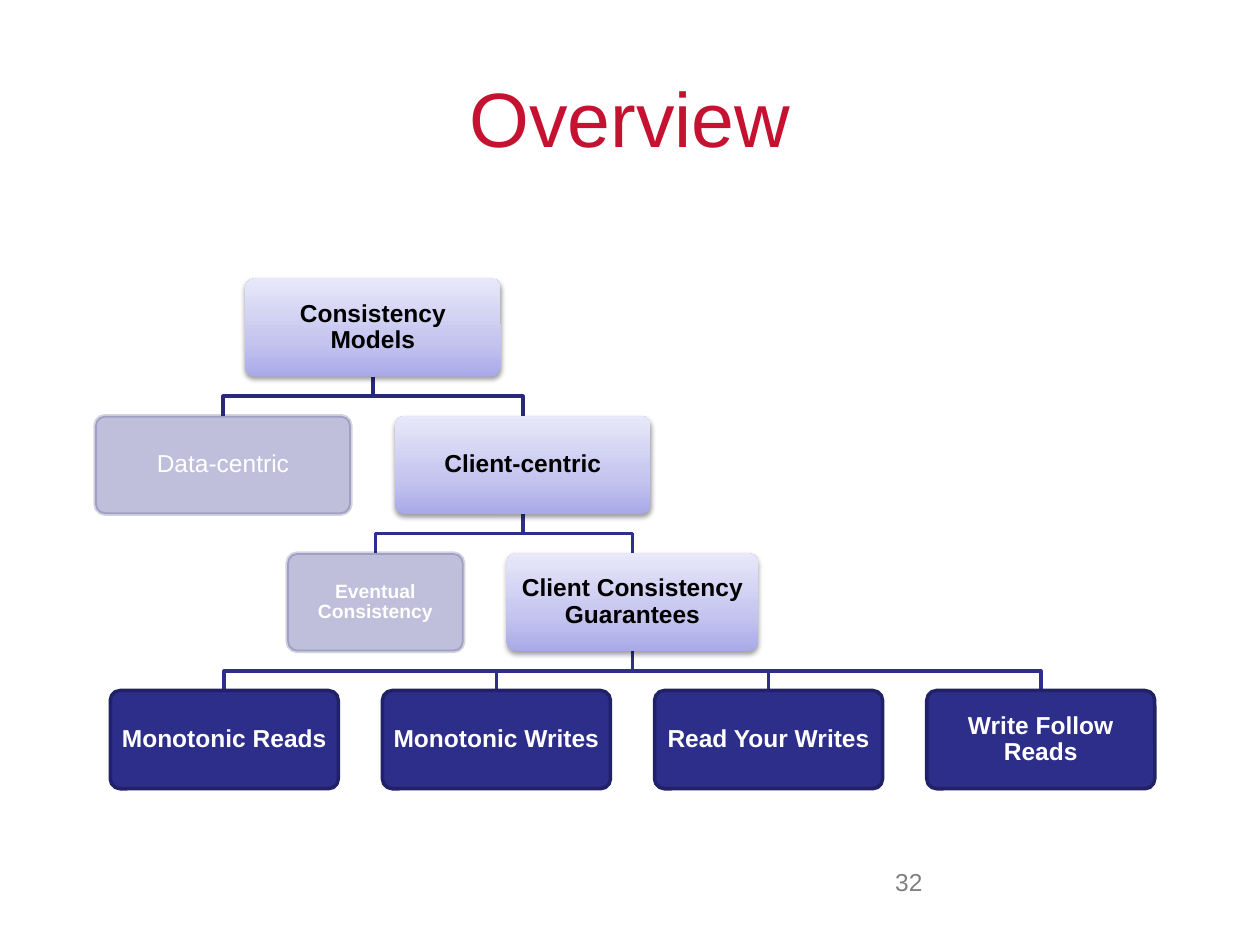
from dataclasses import dataclass, field

from lxml.etree import SubElement
from pptx import Presentation
from pptx.dml.color import RGBColor
from pptx.enum.shapes import MSO_SHAPE
from pptx.enum.text import MSO_ANCHOR, PP_ALIGN
from pptx.oxml import parse_xml
from pptx.oxml.ns import nsdecls, qn
from pptx.util import Inches, Pt

FONT = "Arial"
RED = RGBColor(0xC4, 0x12, 0x30)
GRAY = RGBColor(0x80, 0x80, 0x80)
BLACK = RGBColor(0, 0, 0)
WHITE = RGBColor(0xFF, 0xFF, 0xFF)
NAVY = RGBColor(0x2D, 0x2D, 0x8A)
NAVY_BORDER = RGBColor(0x21, 0x21, 0x66)
ROOT_LINK = RGBColor(0x29, 0x29, 0x7B)
LINK = RGBColor(0x2E, 0x2E, 0x8B)
GRADIENT_STOPS = (
    (0, RGBColor(0xA9, 0xA9, 0xE9)),
    (35, RGBColor(0xC4, 0xC4, 0xEF)),
    (100, RGBColor(0xE8, 0xE8, 0xFA)),
)
NODE_HEIGHT = 0.78
LEVEL_GAP = 0.31
LEAF_WIDTH = 1.81
LEAF_PITCH = 2.16


@dataclass
class Node:
    """One box of the tree, with its centre measured from the tree's left edge."""

    text: str
    center: float
    width: float
    style: str
    size: int = 14
    bold: bool = True
    link: RGBColor = LINK
    children: list = field(default_factory=list)


def consistency_tree():
    """Return the root of the consistency model tree."""
    names = ("Monotonic Reads", "Monotonic Writes", "Read Your Writes", "Write Follow Reads")
    leaves = [
        Node(name, 1.02 + index * LEAF_PITCH, LEAF_WIDTH, "solid")
        for index, name in enumerate(names)
    ]
    guarantees = Node("Client Consistency Guarantees", 4.26, 2, "active", children=leaves)
    eventual = Node("Eventual Consistency", 2.22, 1.4, "faded", size=11)
    client = Node("Client-centric", 3.39, 2.03, "active", children=[eventual, guarantees])
    data = Node("Data-centric", 1.01, 2.03, "faded", bold=False)
    return Node("Consistency Models", 2.2, 2.03, "active", link=ROOT_LINK, children=[data, client])


def format_text(paragraph, size, color, bold=False, align=PP_ALIGN.CENTER):
    """Format a paragraph and its runs."""
    paragraph.alignment = align
    for run in paragraph.runs:
        run.font.name = FONT
        run.font.size = Pt(size)
        run.font.bold = bold
        run.font.color.rgb = color


def set_alpha(fill_format, percent):
    """Give a solid fill or line the stated opacity."""
    color = fill_format.find(".//" + qn("a:srgbClr"))
    SubElement(color, qn("a:alpha"), val=str(percent * 1000))


def style_active(shape):
    """Give a box the upward gradient and the soft shadow."""
    stops = "".join(
        f'<a:gs pos="{position * 1000}"><a:srgbClr val="{color}"/></a:gs>'
        for position, color in GRADIENT_STOPS
    )
    gradient = parse_xml(
        f'<a:gradFill {nsdecls("a")} rotWithShape="1"><a:gsLst>{stops}</a:gsLst>'
        '<a:lin ang="16200000" scaled="0"/></a:gradFill>'
    )
    properties = shape._element.spPr
    properties.find(qn("a:prstGeom")).addnext(gradient)
    shape.line.fill.background()
    shadow = parse_xml(
        f'<a:outerShdw {nsdecls("a")} blurRad="{Pt(3.1)}" dist="{Pt(1.6)}" dir="5400000"'
        ' rotWithShape="0"><a:srgbClr val="000000"><a:alpha val="38000"/></a:srgbClr>'
        "</a:outerShdw>"
    )
    properties.find(qn("a:effectLst")).append(shadow)


def style_navy(shape, faded):
    """Give a box the navy fill and border, see-through when faded."""
    shape.fill.solid()
    shape.fill.fore_color.rgb = NAVY
    shape.line.color.rgb = NAVY_BORDER
    shape.line.width = Pt(2)
    if faded:
        properties = shape._element.spPr
        set_alpha(properties.find(qn("a:solidFill")), 30)
        set_alpha(properties.find(qn("a:ln")), 20)


def add_node(slide, node, left, top):
    """Draw one labelled box of the tree."""
    shape = slide.shapes.add_shape(
        MSO_SHAPE.ROUNDED_RECTANGLE,
        Inches(left + node.center - node.width / 2),
        Inches(top),
        Inches(node.width),
        Inches(NODE_HEIGHT),
    )
    shape.adjustments[0] = 0.1
    shape.shadow.inherit = False
    if node.style == "active":
        style_active(shape)
    else:
        style_navy(shape, node.style == "faded")
    text_frame = shape.text_frame
    text_frame.word_wrap = True
    text_frame.vertical_anchor = MSO_ANCHOR.MIDDLE
    text_frame.margin_left = text_frame.margin_right = Inches(0.06)
    text_frame.margin_top = text_frame.margin_bottom = Inches(0.06)
    text_frame.text = node.text
    paragraph = text_frame.paragraphs[0]
    paragraph.line_spacing = 0.9
    format_text(paragraph, node.size, BLACK if node.style == "active" else WHITE, node.bold)


def add_link(slide, start_x, end_x, top, color):
    """Draw the stepped line from a parent down to a child."""
    middle = Inches(top + LEVEL_GAP / 2)
    start, end = Inches(start_x), Inches(end_x)
    builder = slide.shapes.build_freeform(start, Inches(top))
    builder.add_line_segments(
        [(start, middle), (end, middle), (end, Inches(top + LEVEL_GAP))], close=False
    )
    link = builder.convert_to_shape()
    link.shadow.inherit = False
    link.fill.background()
    link.line.color.rgb = color
    link.line.width = Pt(2)


def add_tree(slide, node, left, top):
    """Draw a node, its links and everything below it."""
    bottom = top + NODE_HEIGHT
    for child in node.children:
        add_link(slide, left + node.center, left + child.center, bottom, node.link)
        add_tree(slide, child, left, bottom + LEVEL_GAP)
    add_node(slide, node, left, top)


def add_title(slide, left, top, width, height):
    """Place and format the slide title."""
    title = slide.shapes.title
    title.left, title.top = Inches(left), Inches(top)
    title.width, title.height = Inches(width), Inches(height)
    title.text_frame.text = "Overview"
    title.text_frame.vertical_anchor = MSO_ANCHOR.MIDDLE
    format_text(title.text_frame.paragraphs[0], 44, RED)


def add_page_number(slide, left, top, width, height):
    """Place the page number."""
    box = slide.shapes.add_textbox(Inches(left), Inches(top), Inches(width), Inches(height))
    box.text_frame.word_wrap = True
    box.text_frame.text = "32"
    format_text(box.text_frame.paragraphs[0], 14, GRAY, align=PP_ALIGN.RIGHT)


def main():
    """Build and save the presentation."""
    presentation = Presentation()
    presentation.slide_width, presentation.slide_height = Inches(10), Inches(7.5)
    slide = presentation.slides.add_slide(presentation.slide_layouts[5])
    add_title(slide, 0.5, 0.3, 9, 1.25)
    add_tree(slide, consistency_tree(), 0.76, 2.21)
    add_page_number(slide, 6.5, 6.83, 0.92, 0.52)
    presentation.save("out.pptx")


if __name__ == "__main__":
    main()
